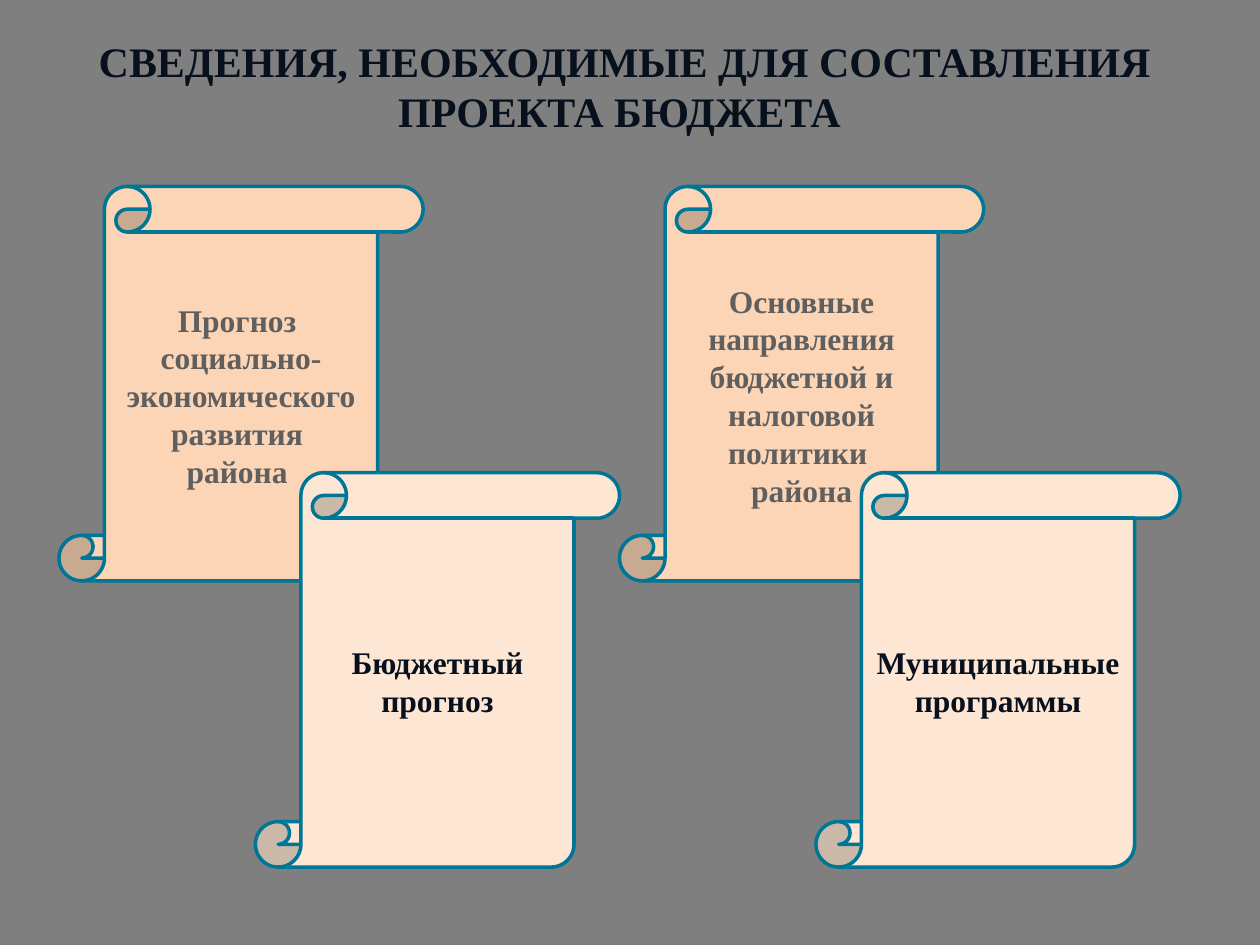
import pptx
import pptx.dml.color
import pptx.enum.shapes
import pptx.enum.text
import pptx.util

Cm = pptx.util.Cm
Pt = pptx.util.Pt
RGBColor = pptx.dml.color.RGBColor
MSO_ANCHOR = pptx.enum.text.MSO_ANCHOR

FONT = "Times New Roman"
BACKGROUND = RGBColor(0x7F, 0x7F, 0x7F)
NAVY = RGBColor(0x07, 0x11, 0x1D)
GRAY = RGBColor(0x5F, 0x5F, 0x5F)
PEACH = RGBColor(0xFB, 0xD5, 0xB5)
LIGHT_PEACH = RGBColor(0xFD, 0xE6, 0xD3)
TEAL = RGBColor(0x00, 0x76, 0x96)

TITLE_ONLY_LAYOUT = 5


def write_text(text_frame, text, *, size, color, anchor):
    """Fill a frame with centred bold text, one paragraph per line."""
    text_frame.word_wrap = True
    text_frame.auto_size = pptx.enum.text.MSO_AUTO_SIZE.NONE
    text_frame.vertical_anchor = anchor
    text_frame.text = text
    for paragraph in text_frame.paragraphs:
        paragraph.alignment = pptx.enum.text.PP_ALIGN.CENTER
        paragraph.space_before = Pt(0)
        for run in paragraph.runs:
            run.font.name = FONT
            run.font.size = Pt(size)
            run.font.bold = True
            run.font.color.rgb = color


class SlideBuilder:
    """Holds the scroll style and the current slide."""

    scroll_width = Cm(7.34)
    scroll_height = Cm(7.95)
    line_width = Pt(2)

    def __init__(self, presentation):
        layout = presentation.slide_layouts[TITLE_ONLY_LAYOUT]
        self.slide = presentation.slides.add_slide(layout)
        fill = self.slide.background.fill
        fill.solid()
        fill.fore_color.rgb = BACKGROUND

    def title(self, text, left, top, width, height):
        shape = self.slide.shapes.title
        shape.left, shape.top = left, top
        shape.width, shape.height = width, height
        write_text(shape.text_frame, text, size=24, color=NAVY,
                   anchor=MSO_ANCHOR.TOP)

    def scroll(self, text, left, top, fill_color, text_color):
        shape = self.slide.shapes.add_shape(
            pptx.enum.shapes.MSO_SHAPE.VERTICAL_SCROLL,
            left, top, self.scroll_width, self.scroll_height)
        shape.shadow.inherit = False
        shape.fill.solid()
        shape.fill.fore_color.rgb = fill_color
        shape.line.color.rgb = TEAL
        shape.line.width = self.line_width
        write_text(shape.text_frame, text, size=18, color=text_color,
                   anchor=MSO_ANCHOR.MIDDLE)


def main():
    presentation = pptx.Presentation()
    presentation.slide_width = Cm(25.4)
    presentation.slide_height = Cm(19.05)
    builder = SlideBuilder(presentation)

    # Title
    left = Cm(1.19)
    builder.title("СВЕДЕНИЯ, НЕОБХОДИМЫЕ ДЛЯ СОСТАВЛЕНИЯ ПРОЕКТА БЮДЖЕТА ",
                  left, Cm(0.58), Cm(22.81), Cm(2.31))

    # Two pairs of scrolls: the front one overlaps the back one
    top = Cm(3.76)
    pair_step = Cm(11.3)
    front_right, front_down = Cm(3.96), Cm(5.77)
    pairs = [
        ("Прогноз \nсоциально-экономического развития \nрайона ",
         "Бюджетный прогноз"),
        ("Основные направления бюджетной и налоговой политики \nрайона",
         "Муниципальные программы"),
    ]
    for index, (back_text, front_text) in enumerate(pairs):
        pair_left = left + index * pair_step
        builder.scroll(back_text, pair_left, top, PEACH, GRAY)
        builder.scroll(front_text, pair_left + front_right, top + front_down,
                       LIGHT_PEACH, NAVY)

    presentation.save("out.pptx")


if __name__ == "__main__":
    main()
